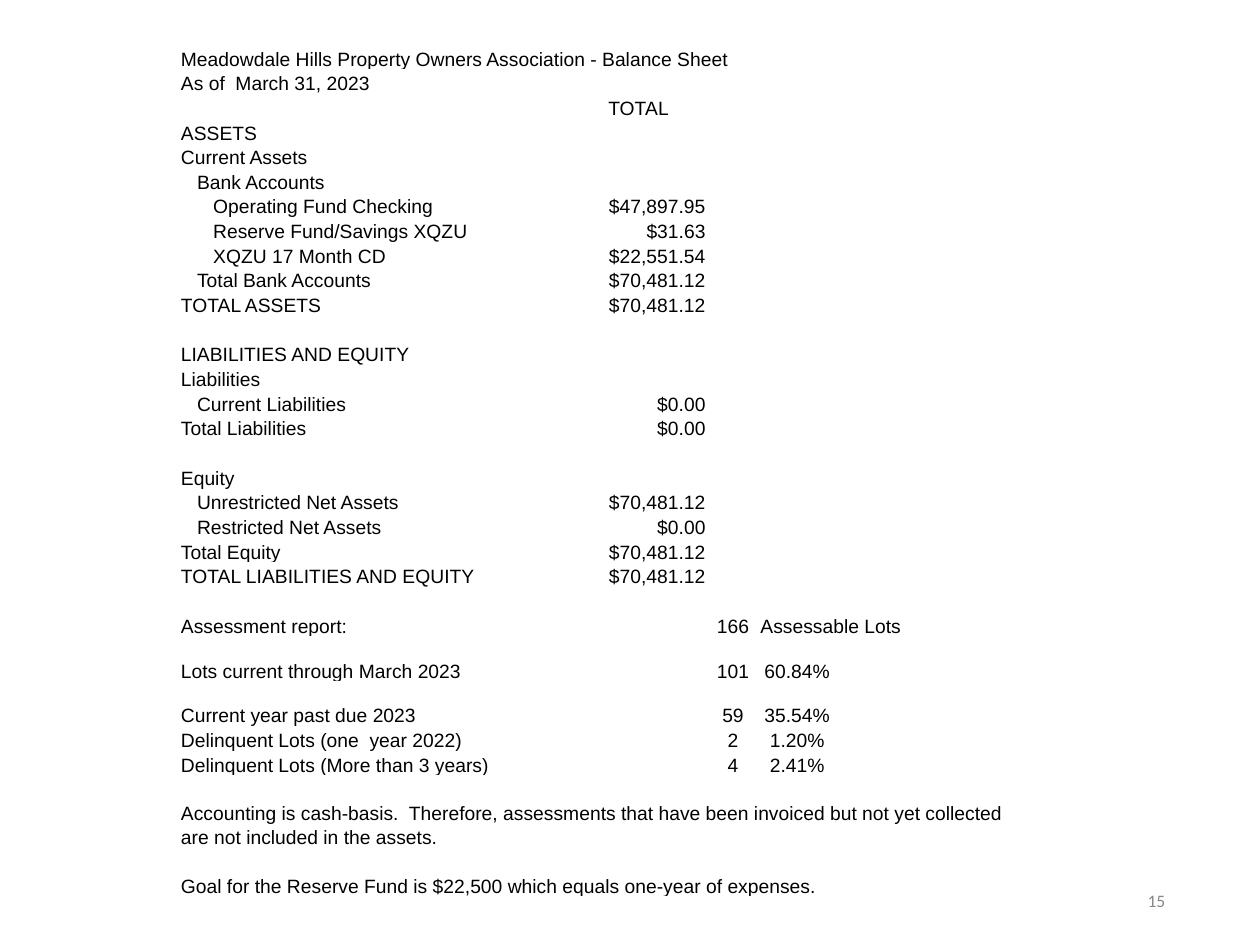
from lxml import etree
from pptx import Presentation, util as u
from pptx.dml.color import RGBColor
from pptx.enum import text as t
from pptx.oxml.ns import qn

PX = u.Inches(1) // 250
COLORS = {"text": "000000", "border": "FFFFFF", "page": "888888"}
LEFT, CENTER, RIGHT = t.PP_ALIGN.LEFT, t.PP_ALIGN.CENTER, t.PP_ALIGN.RIGHT

COLUMN_WIDTHS = [775, 270, 105, 150, 250, 320]
COLUMN_ALIGN = [LEFT, RIGHT, CENTER, CENTER, LEFT, LEFT]
TABLE_LEFT, TABLE_TOP = 357, 49
ROW_HEIGHT, NOTE_HEIGHT = 49, 48
TALL_ROWS = {0: 90, 24: 89, 25: 89}
FIRST_NOTE_ROW = 28
INDENT = 32

# (indent level, label, amount, lots, share)
ROWS = [
    (0, "Meadowdale Hills Property Owners Association - Balance Sheet"),
    (0, "As of  March 31, 2023"),
    (0, "", "TOTAL"),
    (0, "ASSETS"),
    (0, "Current Assets"),
    (1, "Bank Accounts"),
    (2, "Operating Fund Checking", "$47,897.95"),
    (2, "Reserve Fund/Savings XQZU", "$31.63"),
    (2, "XQZU 17 Month CD", "$22,551.54"),
    (1, "Total Bank Accounts", "$70,481.12"),
    (0, "TOTAL ASSETS", "$70,481.12"),
    (0, ""),
    (0, "LIABILITIES AND EQUITY"),
    (0, "Liabilities"),
    (1, "Current Liabilities", "$0.00"),
    (0, "Total Liabilities", "$0.00"),
    (0, ""),
    (0, "Equity"),
    (1, "Unrestricted Net Assets", "$70,481.12"),
    (1, "Restricted Net Assets", "$0.00"),
    (0, "Total Equity", "$70,481.12"),
    (0, "TOTAL LIABILITIES AND EQUITY", "$70,481.12"),
    (0, ""),
    (0, "Assessment report:", "", "166", "Assessable Lots"),
    (0, "Lots current through March 2023", "", "101", "60.84%"),
    (0, "Current year past due 2023", "", "59", "35.54%"),
    (0, "Delinquent Lots (one  year 2022)", "", "2", "1.20%"),
    (0, "Delinquent Lots (More than 3 years)", "", "4", "2.41%"),
    (0, ""),
    (0, "Accounting is cash-basis.  Therefore, assessments that have been "
        "invoiced but not yet collected"),
    (0, "are not included in the assets."),
    (0, ""),
    (0, "Goal for the Reserve Fund is $22,500 which equals one-year of expenses."),
]
# (row, first column, last column)
MERGES = [(0, 0, 3), (23, 0, 1), (23, 3, 4), (24, 0, 1), (26, 0, 1),
          (27, 0, 1), (29, 0, 5), (31, 0, 1), (32, 0, 4)]
ALIGN_EXCEPTIONS = {(2, 1): CENTER, (23, 3): LEFT}


def row_height(row):
    return TALL_ROWS.get(row, NOTE_HEIGHT if row >= FIRST_NOTE_ROW else ROW_HEIGHT)


def set_font(paragraph, name, size, color):
    paragraph.font.name = name
    paragraph.font.size = u.Pt(size)
    paragraph.font.color.rgb = RGBColor.from_string(COLORS[color])


def add_borders(cell):
    properties = cell._tc.get_or_add_tcPr()
    for side in ("lnL", "lnR", "lnT", "lnB"):
        line = etree.SubElement(properties, qn("a:" + side), w=str(u.Pt(1)))
        fill = etree.SubElement(line, qn("a:solidFill"))
        etree.SubElement(fill, qn("a:srgbClr"), val=COLORS["border"])


def fill_cell(cell, content, align, level):
    cell.margin_left = (2 + level * INDENT) * PX
    cell.margin_right = cell.margin_top = 2 * PX
    cell.margin_bottom = 0
    cell.vertical_anchor = t.MSO_ANCHOR.BOTTOM
    add_borders(cell)
    cell.fill.background()
    paragraph = cell.text_frame.paragraphs[0]
    paragraph.alignment = align
    set_font(paragraph, "Arial", 11, "text")
    if content:
        paragraph.add_run().text = content
    else:  # keeps empty rows from growing to the default text size
        etree.SubElement(paragraph._p, qn("a:endParaRPr"), sz="1100")


def add_balance_sheet(slide):
    heights = [row_height(row) for row in range(len(ROWS))]
    sheet = slide.shapes.add_table(
        len(ROWS), len(COLUMN_WIDTHS), TABLE_LEFT * PX, TABLE_TOP * PX,
        sum(COLUMN_WIDTHS) * PX, sum(heights) * PX).table
    sheet.first_row = sheet.horz_banding = False
    for column, width in zip(sheet.columns, COLUMN_WIDTHS):
        column.width = width * PX
    for row, (level, *entries) in enumerate(ROWS):
        sheet.rows[row].height = heights[row] * PX
        for col, align in enumerate(COLUMN_ALIGN):
            content = entries[col] if col < len(entries) else ""
            fill_cell(sheet.cell(row, col), content,
                      ALIGN_EXCEPTIONS.get((row, col), align),
                      level if col == 0 else 0)
    for row, first, last in MERGES:
        sheet.cell(row, first).merge(sheet.cell(row, last))


def add_page_number(slide, number):
    frame = slide.shapes.add_textbox(1765 * PX, 1737 * PX, 562 * PX, 100 * PX).text_frame
    frame.word_wrap = True
    frame.vertical_anchor = t.MSO_ANCHOR.MIDDLE
    frame.margin_left = frame.margin_right = 15 * PX
    frame.margin_top = frame.margin_bottom = 8 * PX
    paragraph = frame.paragraphs[0]
    paragraph.text = number
    paragraph.alignment = RIGHT
    set_font(paragraph, "Calibri", 10, "page")


def main():
    deck = Presentation()
    deck.slide_width, deck.slide_height = 2500 * PX, 1875 * PX
    slide = deck.slides.add_slide(deck.slide_layouts[6])
    add_page_number(slide, "15")
    add_balance_sheet(slide)
    deck.save("out.pptx")


if __name__ == "__main__":
    main()
